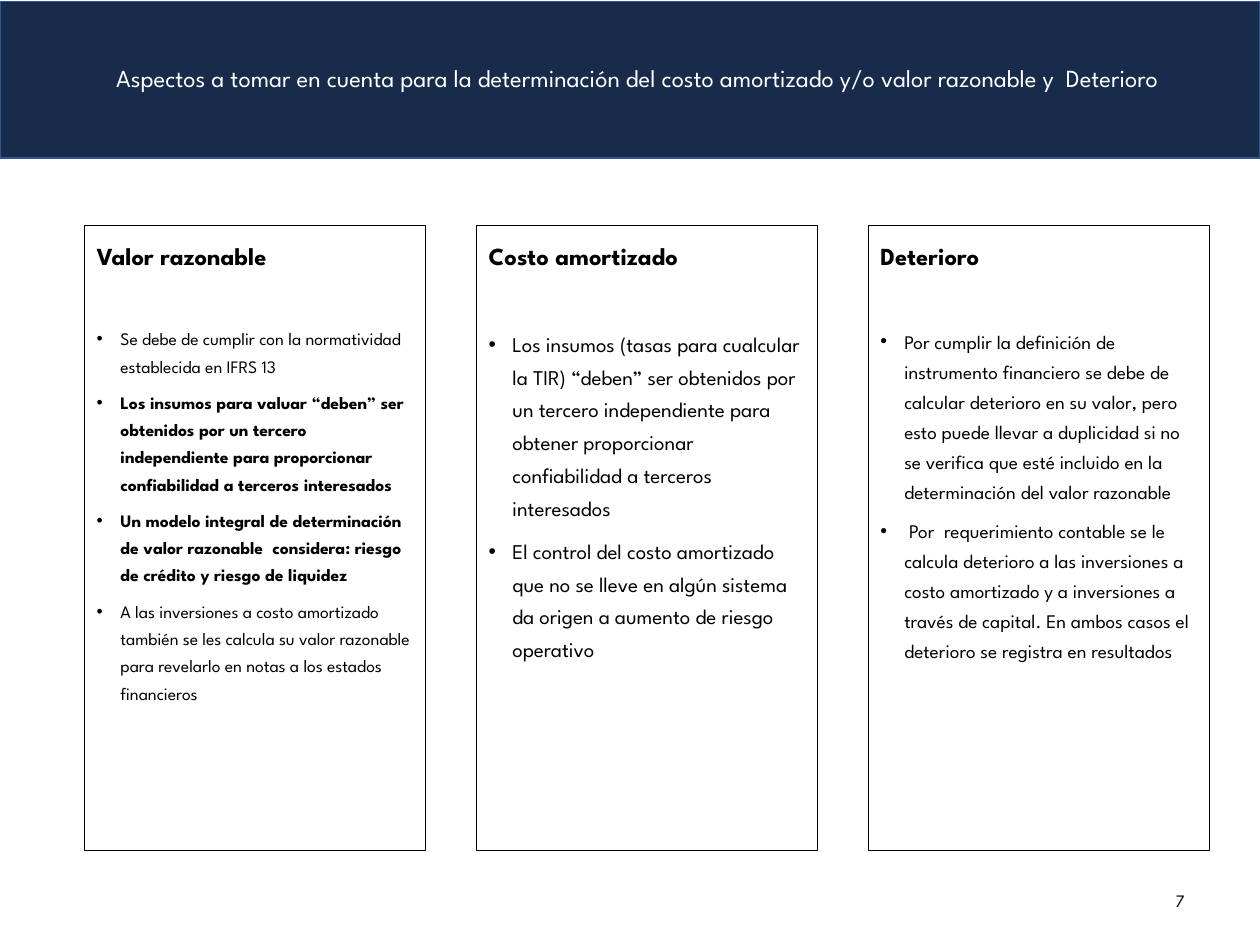
from dataclasses import dataclass

from lxml import etree
from pptx import Presentation
from pptx import util as u
from pptx.dml.color import RGBColor
from pptx.enum import shapes, text
from pptx.oxml import ns

FONT = "League Spartan"
HUES = {"navy": "182B4A", "edge": "325491", "ink": "000000", "white": "FFFFFF"}
LEFT, TOP, WIDTH, HEIGHT, STEP = 1.7, 4.55, 6.88, 12.6, 7.9
INDENT = u.Cm(0.48)
HEAD_GAP = 24.7


@dataclass
class Point:
    words: str
    bold: bool = False


@dataclass
class Panel:
    head: str
    size: int
    points: list[Point]


PANELS = [
    Panel("Valor razonable", 10, [
        Point("Se debe de cumplir con la normatividad establecida en IFRS 13"),
        Point("Los insumos para valuar “deben” ser obtenidos por un tercero independiente "
              "para proporcionar confiabilidad a terceros interesados", True),
        Point("Un modelo integral de determinación de valor razonable  considera: "
              "riesgo de crédito y riesgo de liquidez", True),
        Point("A las inversiones a costo amortizado también se les calcula su valor "
              "razonable para revelarlo en notas a los estados financieros"),
    ]),
    Panel("Costo amortizado", 12, [
        Point("Los insumos (tasas para cualcular la TIR) “deben” ser obtenidos por un "
              "tercero independiente para obtener proporcionar confiabilidad a terceros "
              "interesados"),
        Point("El control del costo amortizado que no se lleve en algún sistema da origen "
              "a aumento de riesgo operativo"),
    ]),
    Panel("Deterioro", 11, [
        Point("Por cumplir la definición de instrumento financiero se debe de calcular "
              "deterioro en su valor, pero esto puede llevar a duplicidad si no se "
              "verifica que esté incluido en la determinación del valor razonable"),
        Point(" Por  requerimiento contable se le calcula deterioro a las inversiones a "
              "costo amortizado y a inversiones a través de capital. En ambos casos el "
              "deterioro se registra en resultados"),
    ]),
]


def color(name: str) -> RGBColor:
    return RGBColor.from_string(HUES[name])


def style(para, size: int, hue: str = "ink", bold: bool = False) -> None:
    for run in para.runs:
        run.font.name = FONT
        run.font.size = u.Pt(size)
        run.font.bold = bold
        run.font.color.rgb = color(hue)


def add_box(slide, left: float, top: float, width: float, height: float,
            edge: str, weight: float):
    box = slide.shapes.add_shape(shapes.MSO_SHAPE.RECTANGLE, u.Cm(left), u.Cm(top),
                                 u.Cm(width), u.Cm(height))
    box.shadow.inherit = False
    box.fill.background()
    box.line.color.rgb = color(edge)
    box.line.width = u.Pt(weight)
    return box


def add_label(slide, left: float, top: float, width: float, height: float,
              words: str, size: int, hue: str) -> None:
    frame = slide.shapes.add_textbox(u.Cm(left), u.Cm(top), u.Cm(width),
                                     u.Cm(height)).text_frame
    frame.word_wrap = True
    frame.vertical_anchor = text.MSO_ANCHOR.MIDDLE
    frame.text = words
    para = frame.paragraphs[0]
    para.alignment = text.PP_ALIGN.RIGHT
    style(para, size, hue)


def add_bullet(para) -> None:
    props = para._p.get_or_add_pPr()
    props.set("marL", str(INDENT))
    props.set("indent", str(-INDENT))
    font = etree.SubElement(props, ns.qn("a:buFont"))
    font.set("typeface", "Arial")
    mark = etree.SubElement(props, ns.qn("a:buChar"))
    mark.set("char", "•")


def add_panel(slide, left: float, panel: Panel) -> None:
    frame = add_box(slide, left, TOP, WIDTH, HEIGHT, "ink", 0.25).text_frame
    frame.word_wrap = True
    frame.vertical_anchor = text.MSO_ANCHOR.TOP
    frame.text = panel.head
    style(frame.paragraphs[0], 14, bold=True)
    for rank, point in enumerate(panel.points):
        para = frame.add_paragraph()
        para.text = point.words
        add_bullet(para)
        para.space_before = u.Pt(panel.size / 2 + (0 if rank else HEAD_GAP))
        style(para, panel.size, bold=point.bold)
    for para in frame.paragraphs:
        para.alignment = text.PP_ALIGN.LEFT
        para.line_spacing = 1.3


def main() -> None:
    deck = Presentation()
    deck.slide_width, deck.slide_height = u.Cm(25.4), u.Cm(19.05)
    slide = deck.slides.add_slide(deck.slide_layouts[6])

    band = add_box(slide, 0, 0.03, 25.4, 3.15, "edge", 1)
    band.fill.solid()
    band.fill.fore_color.rgb = color("navy")
    add_label(slide, 1.83, 0.33, 21.8, 2.46,
              "Aspectos a tomar en cuenta para la determinación del costo amortizado "
              "y/o valor razonable y  Deterioro", 14, "white")
    for rank, panel in enumerate(PANELS):
        add_panel(slide, LEFT + rank * STEP, panel)
    add_label(slide, 18.21, 17.65, 5.92, 1.02, "7", 10, "ink")

    deck.save("out.pptx")


if __name__ == "__main__":
    main()
